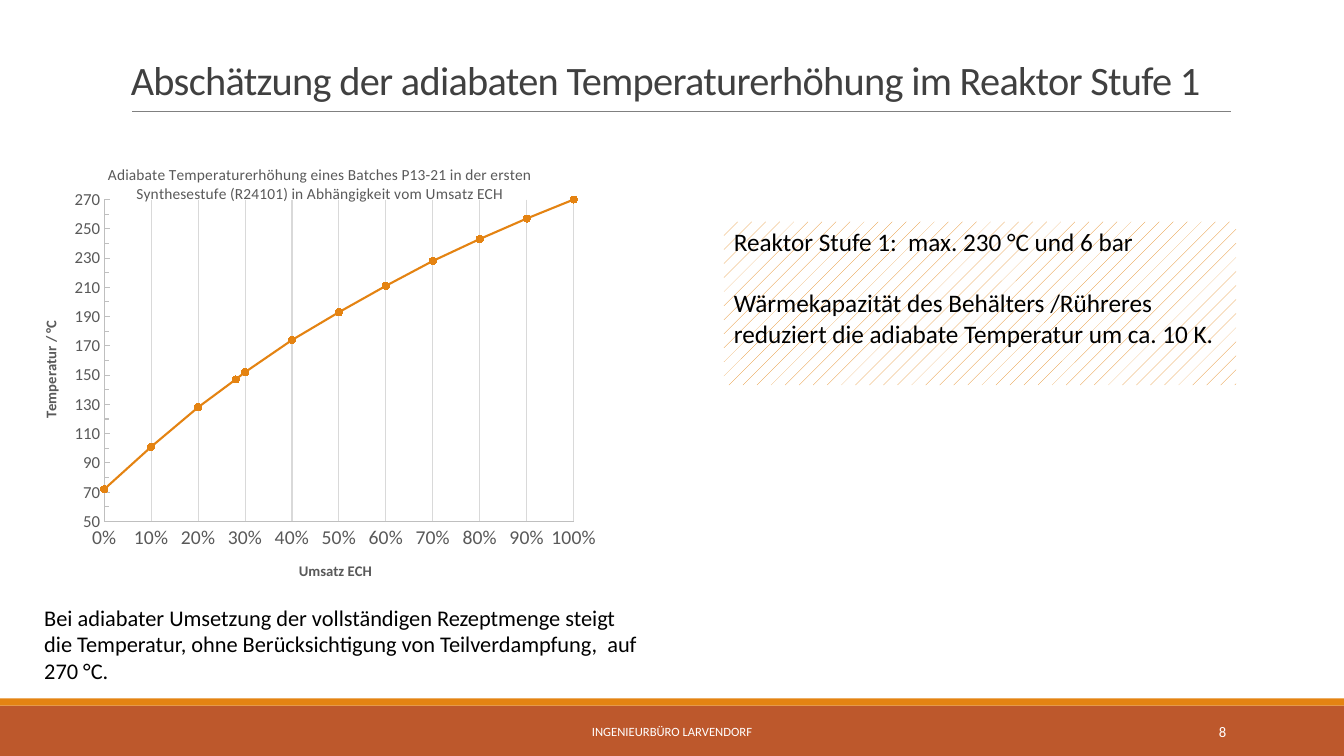
from dataclasses import dataclass, field
from typing import Any

from lxml import etree
from pptx import Presentation
from pptx import util as u
from pptx.chart.data import XyChartData
from pptx.dml.color import RGBColor
from pptx.enum import chart as chart_enum
from pptx.enum import dml, shapes, text
from pptx.oxml.ns import qn

PX = 9144  # 100 px to the inch
FONT = "Calibri"
ORANGE, RUST, WHITE, BLACK = "E48312", "BD582C", "FFFFFF", "000000"
TITLE_GREY, LABEL_GREY, AXIS_GREY, GRID_GREY = "404040", "595959", "BFBFBF", "D9D9D9"

CONVERSION = [0, 0.1, 0.2, 0.28, 0.3, 0.4, 0.5, 0.6, 0.7, 0.8, 0.9, 1]
TEMPERATURE = [72, 101, 128, 147, 152, 174, 193, 211, 228, 243, 257, 270]
PLOT_AREA = {"x": 0.117, "y": 0.119, "w": 0.833, "h": 0.731}


@dataclass
class Bar:
    box: tuple[int, int, int, int]
    color: str


@dataclass
class TextBlock:
    box: tuple[int, int, int, int]
    lines: list[str]
    size: float
    color: str = BLACK
    anchor: Any = text.MSO_ANCHOR.TOP
    spacing: float = 0
    hatched: bool = False
    paragraph_format: dict[str, Any] = field(default_factory=dict)
    gaps_before: dict[int, int] = field(default_factory=dict)


BARS = [Bar((0, 700, 1333, 50), RUST), Bar((0, 693, 1333, 7), ORANGE)]

TEXT_BLOCKS = [
    TextBlock((120, 31, 1100, 77),
              ["Abschätzung der adiabaten Temperaturerhöhung im Reaktor Stufe 1"],
              28.8, TITLE_GREY, text.MSO_ANCHOR.BOTTOM, -50,
              paragraph_format={"line_spacing": 0.85}),
    TextBlock((403, 706, 527, 40), ["INGENIEURBÜRO LARVENDORF"], 9, WHITE,
              text.MSO_ANCHOR.MIDDLE,
              paragraph_format={"alignment": text.PP_ALIGN.CENTER}),
    TextBlock((1083, 706, 143, 40), ["8"], 10.5, WHITE, text.MSO_ANCHOR.MIDDLE,
              paragraph_format={"alignment": text.PP_ALIGN.RIGHT}),
    TextBlock((34, 594, 609, 91),
              ["Bei adiabater Umsetzung der vollständigen Rezeptmenge steigt die Temperatur, "
               "ohne Berücksichtigung von Teilverdampfung,  auf 270 °C."], 16),
    TextBlock((718, 220, 508, 162),
              ["Reaktor Stufe 1:  max. 230 °C und 6 bar",
               "Wärmekapazität des Behälters /Rühreres",
               "reduziert die adiabate Temperatur um ca. 10 K."],
              18, hatched=True, gaps_before={1: 22}),
]


def rgb(color: str) -> RGBColor:
    return RGBColor.from_string(color)


def emu(box: tuple[int, ...]) -> list[int]:
    return [length * PX for length in box]


def apply_format(target: Any, values: dict[str, Any]) -> None:
    for name, value in values.items():
        setattr(target, name, value)


def style_font(font: Any, size: float, color: str, bold: bool = False) -> None:
    apply_format(font, {"name": FONT, "size": u.Pt(size), "bold": bold})
    font.color.rgb = rgb(color)


def style_line(line: Any, color: str, width: float) -> None:
    line.color.rgb = rgb(color)
    line.width = u.Pt(width)


def add_rectangle(slide: Any, box: tuple[int, int, int, int]) -> Any:
    shape = slide.shapes.add_shape(shapes.MSO_SHAPE.RECTANGLE, *emu(box))
    shape.shadow.inherit = False
    shape.line.fill.background()
    return shape


def draw_bar(slide: Any, bar: Bar) -> None:
    fill = add_rectangle(slide, bar.box).fill
    fill.solid()
    fill.fore_color.rgb = rgb(bar.color)


def draw_title_rule(slide: Any) -> None:
    rule = slide.shapes.add_connector(shapes.MSO_CONNECTOR.STRAIGHT,
                                      *emu((131, 110, 1221, 110)))
    style_line(rule.line, "808080", 0.5)
    etree.SubElement(rule._element.spPr, qn("a:effectLst"))


def draw_text(slide: Any, block: TextBlock) -> None:
    if block.hatched:
        shape = add_rectangle(slide, block.box)
        fill = shape.fill
        fill.patterned()
        fill.pattern = dml.MSO_PATTERN.PERCENT_5
        fill.fore_color.rgb = rgb(ORANGE)
        fill.back_color.rgb = rgb(WHITE)
    else:
        shape = slide.shapes.add_textbox(*emu(block.box))
    frame = shape.text_frame
    apply_format(frame, {"word_wrap": True, "vertical_anchor": block.anchor})
    for index, line in enumerate(block.lines):
        paragraph = frame.paragraphs[0] if index == 0 else frame.add_paragraph()
        apply_format(paragraph, {"alignment": text.PP_ALIGN.LEFT,
                                 "space_before": u.Pt(block.gaps_before.get(index, 0)),
                                 **block.paragraph_format})
        run = paragraph.add_run()
        run.text = line
        style_font(run.font, block.size, block.color)
        if block.spacing:
            run.font._element.set("spc", str(block.spacing))


def write_chart_title(title: Any, wording: str, size: float, bold: bool) -> None:
    title.text_frame.text = wording
    style_font(title.text_frame.paragraphs[0].runs[0].font, size, LABEL_GREY, bold)


def style_axis(axis: Any, title: str, size: float, values: dict[str, Any]) -> None:
    apply_format(axis, values)
    write_chart_title(axis.axis_title, title, 10.5, True)
    style_font(axis.tick_labels.font, size, LABEL_GREY)
    style_line(axis.format.line, AXIS_GREY, 0.75)


def place_plot_area(chart: Any) -> None:
    """Fix the inner plot area at PLOT_AREA, in fractions of the chart."""
    plot_area = chart._chartSpace.find(".//" + qn("c:plotArea"))
    for old_layout in plot_area.findall(qn("c:layout")):
        plot_area.remove(old_layout)
    layout = etree.Element(qn("c:layout"))
    manual = etree.SubElement(layout, qn("c:manualLayout"))
    settings = {"layoutTarget": "inner", "xMode": "edge", "yMode": "edge", **PLOT_AREA}
    for name, value in settings.items():
        etree.SubElement(manual, qn(f"c:{name}")).set("val", str(value))
    plot_area.insert(0, layout)


def draw_temperature_chart(slide: Any) -> None:
    data = XyChartData()
    points = data.add_series("Series 1")
    for conversion, temperature in zip(CONVERSION, TEMPERATURE):
        points.add_data_point(conversion, temperature)
    chart = slide.shapes.add_chart(chart_enum.XL_CHART_TYPE.XY_SCATTER_LINES,
                                   *emu((38, 146, 559, 437)), data).chart
    style_font(chart.font, 10, BLACK)
    chart.has_legend = False
    chart.plots[0].vary_by_categories = False
    write_chart_title(chart.chart_title,
                      "Adiabate Temperaturerhöhung eines Batches P13-21 in der ersten "
                      "Synthesestufe (R24101) in Abhängigkeit vom Umsatz ECH", 11, False)
    place_plot_area(chart)

    tick = chart_enum.XL_TICK_MARK
    style_axis(chart.category_axis, "Umsatz ECH", 14, {
        "minimum_scale": 0, "maximum_scale": 1, "major_unit": 0.1,
        "major_tick_mark": tick.NONE, "minor_tick_mark": tick.NONE,
        "has_major_gridlines": True})
    style_line(chart.category_axis.major_gridlines.format.line, GRID_GREY, 0.75)
    apply_format(chart.category_axis.tick_labels,
                 {"number_format": "0%", "number_format_is_linked": False})
    style_axis(chart.value_axis, "Temperatur / °C", 12, {
        "minimum_scale": 50, "maximum_scale": 270, "major_unit": 20, "minor_unit": 10,
        "major_tick_mark": tick.INSIDE, "minor_tick_mark": tick.INSIDE,
        "has_major_gridlines": False})

    series = chart.plots[0].series[0]
    series.smooth = False
    style_line(series.format.line, ORANGE, 1.5)
    marker = series.marker
    apply_format(marker, {"style": chart_enum.XL_MARKER_STYLE.CIRCLE, "size": 5})
    marker.format.fill.solid()
    marker.format.fill.fore_color.rgb = rgb(ORANGE)
    style_line(marker.format.line, ORANGE, 0.75)


def main() -> None:
    presentation = Presentation()
    apply_format(presentation, {"slide_width": 1333 * PX, "slide_height": 750 * PX})
    slide = presentation.slides.add_slide(presentation.slide_layouts[6])
    for bar in BARS:
        draw_bar(slide, bar)
    draw_title_rule(slide)
    draw_temperature_chart(slide)
    for block in TEXT_BLOCKS:
        draw_text(slide, block)
    presentation.save("out.pptx")


if __name__ == "__main__":
    main()
